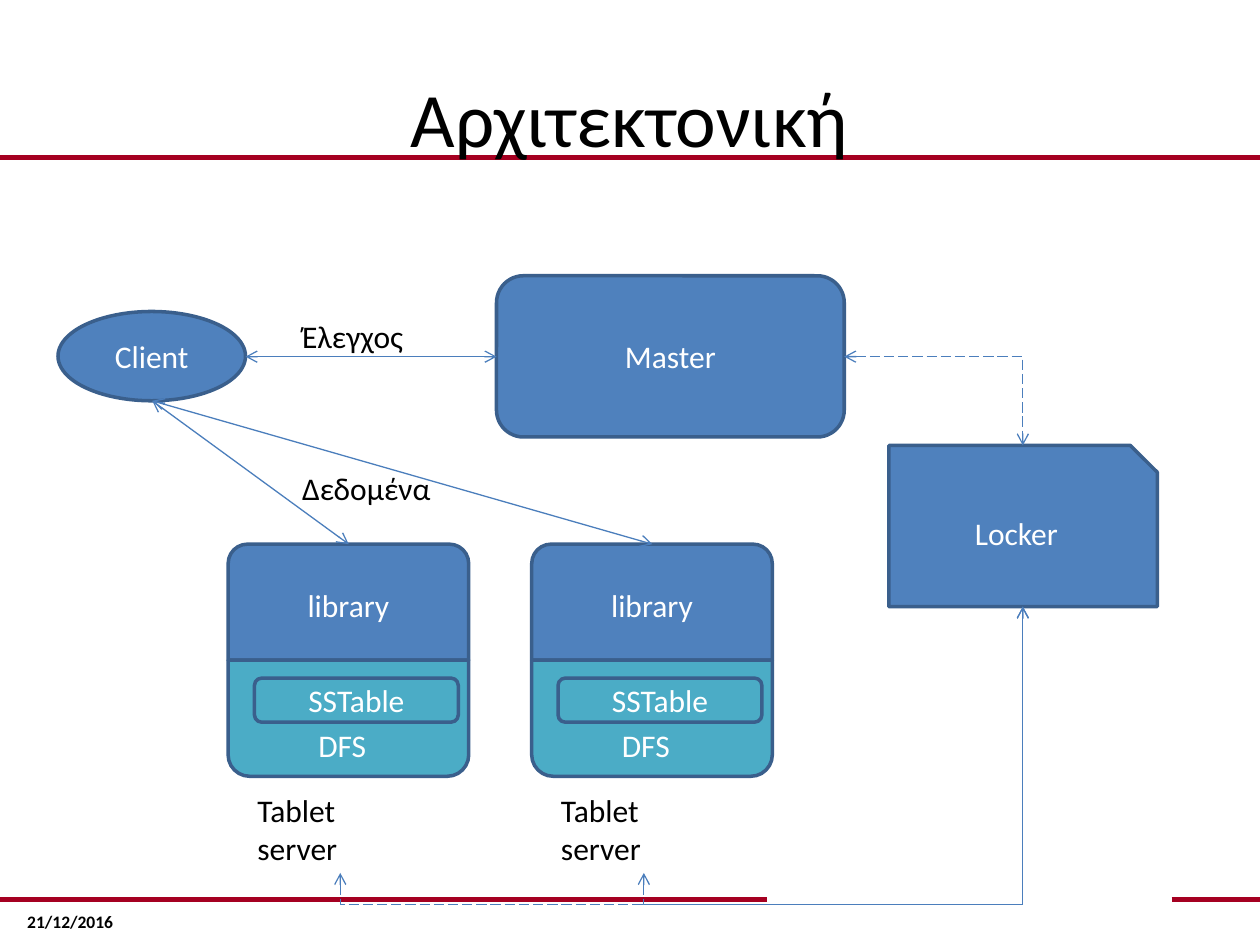
from dataclasses import dataclass

from lxml.etree import SubElement
from pptx import Presentation
from pptx.dml.color import RGBColor as Color
from pptx.enum.dml import MSO_LINE as Dash
from pptx.enum.shapes import MSO_CONNECTOR as Link, MSO_SHAPE as Shape
from pptx.enum.text import MSO_ANCHOR as Anchor, PP_ALIGN as Align
from pptx.oxml.ns import qn
from pptx.util import Cm, Pt


@dataclass(frozen=True)
class Theme:
    font: str = "Calibri"
    title_size: int = 44
    body_size: int = 18
    date_size: int = 10
    black: Color = Color(0x00, 0x00, 0x00)
    white: Color = Color(0xFF, 0xFF, 0xFF)
    rule: Color = Color(0xA5, 0x00, 0x21)
    blue: Color = Color(0x4F, 0x81, 0xBD)
    teal: Color = Color(0x4B, 0xAC, 0xC6)
    outline: Color = Color(0x3A, 0x5F, 0x8C)
    link: Color = Color(0x4B, 0x7E, 0xBC)


theme = Theme()
deck = Presentation()
deck.slide_width, deck.slide_height = Cm(25.4), Cm(19.05)
page = deck.slides.add_slide(deck.slide_layouts[6])


def write_text(box, text, size=theme.body_size, color=theme.black, bold=False,
               align=Align.LEFT, anchor=Anchor.TOP):
    frame = box.text_frame
    frame.word_wrap = True
    frame.vertical_anchor = anchor
    para = frame.paragraphs[0]
    para.alignment = align
    span = para.add_run()
    span.text = text
    span.font.name = theme.font
    span.font.size = Pt(size)
    span.font.bold = bold
    span.font.color.rgb = color


def add_line(start, end, kind=Link.STRAIGHT, color=theme.link, weight=0.75,
             dashed=False, arrows=True):
    line = page.shapes.add_connector(kind, *map(Cm, start + end))
    line.line.color.rgb = color
    line.line.width = Pt(weight)
    if dashed:
        line.line.dash_style = Dash.LONG_DASH
    if arrows:
        outline = line.element.spPr.find(qn("a:ln"))
        for tip in ("a:headEnd", "a:tailEnd"):
            SubElement(outline, qn(tip), type="arrow")
    SubElement(line.element.spPr, qn("a:effectLst"))
    return line


# Rules, date and title
for left, right, y in [(23.62, 25.4, 18.14), (0, 15.47, 18.14), (0, 25.4, 3.18)]:
    add_line((left, y), (right, y), color=theme.rule, weight=3, arrows=False)

date = page.shapes.add_textbox(Cm(0.3), Cm(18.24), Cm(2.79), Cm(0.81))
write_text(date, "21/12/2016", size=theme.date_size, bold=True)
title = page.shapes.add_textbox(Cm(1.27), Cm(0.76), Cm(22.86), Cm(3.18))
write_text(title, "Αρχιτεκτονική", size=theme.title_size,
           align=Align.CENTER, anchor=Anchor.MIDDLE)

# Nodes: preset, text, left, top, width, height, fill
server_lefts = (4.6, 10.72)
nodes = []
for left in server_lefts:
    nodes += [
        (Shape.ROUND_2_SAME_RECTANGLE, "library", left, 10.97, 4.85, 2.34, theme.blue),
        (Shape.ROUND_2_SAME_RECTANGLE, "DFS", left, 13.31, 4.85, 2.34, theme.teal),
        (Shape.ROUNDED_RECTANGLE, "SSTable", left + 0.53, 13.67, 4.11, 0.89, None),
    ]
nodes += [
    (Shape.OVAL, "Client", 1.17, 6.28, 3.78, 1.8, theme.blue),
    (Shape.ROUNDED_RECTANGLE, "Master", 10.01, 5.56, 7.01, 3.25, theme.blue),
    (Shape.SNIP_1_RECTANGLE, "Locker", 17.92, 8.98, 5.41, 3.25, theme.blue),
]
for preset, text, left, top, width, height, fill in nodes:
    node = page.shapes.add_shape(preset, Cm(left), Cm(top), Cm(width), Cm(height))
    node.shadow.inherit = False
    node.line.color.rgb = theme.outline
    node.line.width = Pt(2)
    if fill is None:
        node.fill.background()
    else:
        node.fill.solid()
        node.fill.fore_color.rgb = fill
    anchor = Anchor.MIDDLE
    if text == "DFS":
        node.adjustments[0], node.adjustments[1] = 0, 0.185
        node.text_frame.margin_left = 0
        anchor = Anchor.BOTTOM
    write_text(node, text, color=theme.white, align=Align.CENTER, anchor=anchor)

# Tablet servers to the locker: elbows turned a quarter, passing below the servers
locker_x, locker_bottom, label_bottom = 20.62, 12.23, 17.6
for left in reversed(server_lefts):
    label_x = left + 2.26
    center_x, center_y = (label_x + locker_x) / 2, (label_bottom + locker_bottom) / 2
    half_run, half_rise = (locker_x - label_x) / 2, (label_bottom - locker_bottom) / 2
    elbow = add_line((center_x + half_rise, center_y + half_run),
                     (center_x - half_rise, center_y - half_run),
                     kind=Link.ELBOW, dashed=True)
    elbow.element.spPr.find(qn("a:xfrm")).set("rot", "5400000")
    guides = elbow.element.spPr.find(qn("a:prstGeom")).find(qn("a:avLst"))
    SubElement(guides, qn("a:gd"), name="adj1", fmla="val -11800")

# Client to Master and to both tablet servers
add_line((4.95, 7.19), (10.01, 7.19))
for left in server_lefts:
    add_line((3.07, 8.08), (left + 2.43, 10.97))

# Master to the locker
corner = add_line((17.02, 7.19), (locker_x, 8.98), kind=Link.ELBOW, dashed=True)
corner.element.spPr.find(qn("a:prstGeom")).set("prst", "bentConnector2")

# Labels
labels = [("Tablet server", left + 0.34, 15.82, 3.78, 1.78) for left in server_lefts]
labels += [("Έλεγχος", 5.84, 6.27, 3.61, 0.99), ("Δεδομένα", 5.84, 9.34, 3.61, 0.99)]
for text, left, top, width, height in labels:
    label = page.shapes.add_textbox(Cm(left), Cm(top), Cm(width), Cm(height))
    write_text(label, text)

deck.save("out.pptx")
